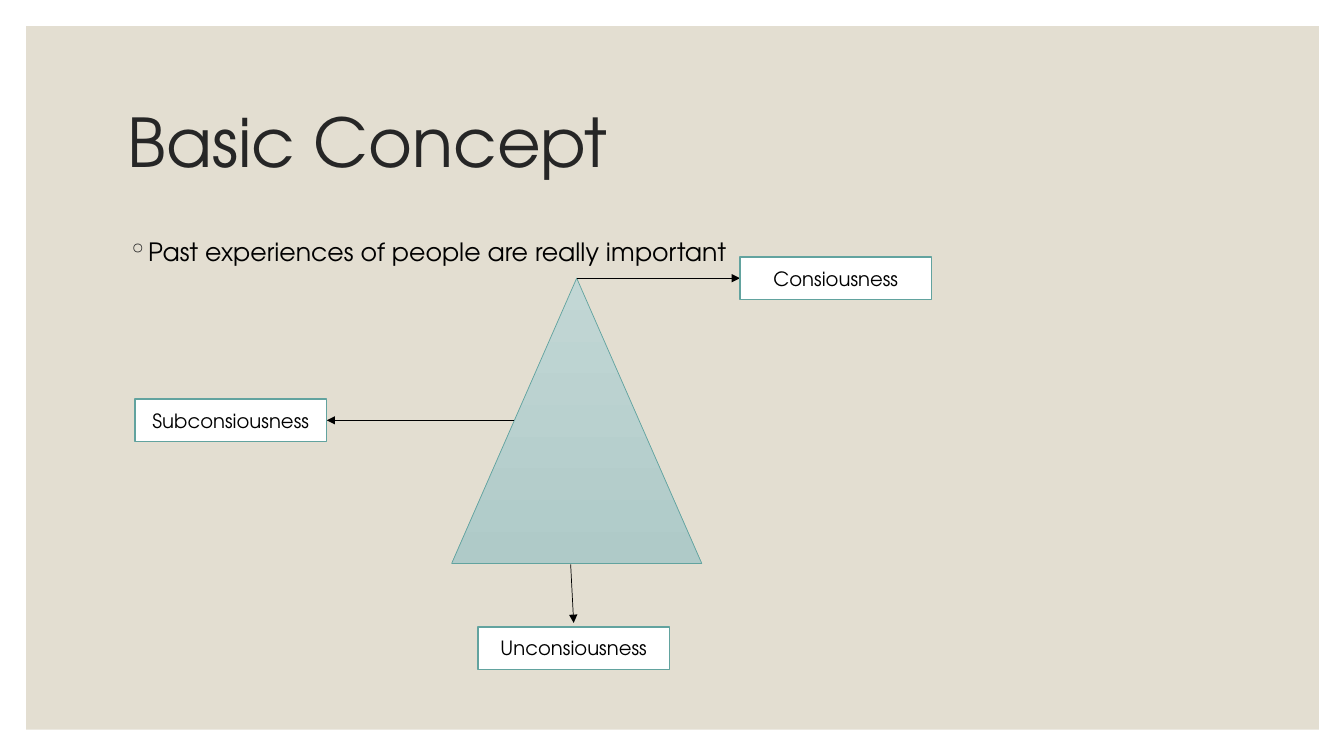
from lxml import etree
from pptx import Presentation
from pptx.dml.color import RGBColor
from pptx.enum.shapes import MSO_CONNECTOR, MSO_SHAPE
from pptx.enum.text import MSO_ANCHOR, PP_ALIGN
from pptx.oxml.ns import qn
from pptx.util import Pt

PX = 9144
FONT = "TeX Gyre Adventor"
WHITE = RGBColor(0xFF, 0xFF, 0xFF)
BLACK = RGBColor(0x00, 0x00, 0x00)
CHARCOAL = RGBColor(0x26, 0x26, 0x26)
SAND = RGBColor(0xE3, 0xDE, 0xD1)
TEAL = RGBColor(0x62, 0xA3, 0x9F)
TEAL_LIGHT = RGBColor(0xC2, 0xD7, 0xD5)
TEAL_MID = RGBColor(0xAF, 0xCA, 0xC8)
RECTANGLE = MSO_SHAPE.RECTANGLE
TRIANGLE = MSO_SHAPE.ISOSCELES_TRIANGLE
STRAIGHT = MSO_CONNECTOR.STRAIGHT
MIDDLE = MSO_ANCHOR.MIDDLE
TOP_SIDE, LEFT_SIDE, RIGHT_SIDE = 0, 1, 3


def px(*lengths):
    """Turn px lengths into EMU."""
    return [length * PX for length in lengths]


def style_text(paragraph, text, size, color):
    """Write one paragraph in the slide font."""
    paragraph.text = text
    paragraph.font.name = FONT
    paragraph.font.size = Pt(size)
    paragraph.font.color.rgb = color


def add_backdrop(slide, box):
    """Fill the box with the sand panel."""
    panel = slide.shapes.add_shape(RECTANGLE, *px(*box))
    panel.shadow.inherit = False
    panel.fill.solid()
    panel.fill.fore_color.rgb = SAND
    panel.line.fill.background()


def add_title(slide, box, text):
    """Place the heading in the vertical middle of the box."""
    frame = slide.shapes.add_textbox(*px(*box)).text_frame
    frame.word_wrap = True
    frame.vertical_anchor = MIDDLE
    style_text(frame.paragraphs[0], text, 48, CHARCOAL)
    frame.paragraphs[0].line_spacing = 0.9


def add_statement(slide, box, text):
    """Place one bulleted statement at the top of the box."""
    frame = slide.shapes.add_textbox(*px(*box)).text_frame
    frame.word_wrap = True
    statement = frame.paragraphs[0]
    style_text(statement, text, 18, BLACK)
    statement.space_before = Pt(9)
    properties = statement._p.get_or_add_pPr()
    properties.set("marL", str(20 * PX))
    properties.set("indent", str(-20 * PX))
    bullet_color = etree.Element(qn("a:buClr"))
    etree.SubElement(bullet_color, qn("a:srgbClr"), val=str(CHARCOAL))
    bullet = etree.Element(qn("a:buChar"), char="◦")
    position = properties.index(properties.find(qn("a:defRPr")))
    properties.insert(position, bullet_color)
    properties.insert(position + 1, bullet)


def add_label(slide, box, text):
    """Place a white level label with centred text."""
    label = slide.shapes.add_shape(RECTANGLE, *px(*box))
    label.shadow.inherit = False
    label.fill.solid()
    label.fill.fore_color.rgb = WHITE
    label.line.color.rgb = TEAL
    label.line.width = Pt(1)
    label.text_frame.vertical_anchor = MIDDLE
    level = label.text_frame.paragraphs[0]
    style_text(level, text, 14, BLACK)
    level.alignment = PP_ALIGN.CENTER
    return label


def add_arrow(slide, start, end):
    """Draw a thin black arrow from start to end."""
    arrow = slide.shapes.add_connector(STRAIGHT, *px(*start, *end))
    arrow.line.color.rgb = BLACK
    arrow.line.width = Pt(0.5)
    etree.SubElement(arrow.line._get_or_add_ln(), qn("a:tailEnd"), type="triangle")
    etree.SubElement(arrow._element.spPr, qn("a:effectLst"))
    return arrow


def add_mind_pyramid(slide, box):
    """Draw the triangle in the box with its three labelled levels."""
    left, top, width, height = box
    apex = left + width // 2
    middle = top + height // 2
    bottom = top + height
    pyramid = slide.shapes.add_shape(TRIANGLE, *px(*box))
    pyramid.shadow.inherit = False
    pyramid.fill.gradient()
    pyramid.fill.gradient_angle = 270
    for stop, color in zip(pyramid.fill.gradient_stops, (TEAL_LIGHT, TEAL_MID)):
        stop.color.rgb = color
    pyramid.line.color.rgb = TEAL
    pyramid.line.width = Pt(0.5)

    label_width, label_height = 190, 42
    conscious_left = left + 286
    subconscious_left = left - 314
    unconscious_left = left + 26
    unconscious_top = bottom + 63

    to_conscious = add_arrow(slide, (apex, top), (conscious_left, top))
    to_subconscious = add_arrow(
        slide, (left + width // 4, middle), (subconscious_left + label_width, middle))
    add_arrow(slide, (apex - 6, bottom + 1),
              (unconscious_left + label_width // 2, unconscious_top - 4))

    conscious, subconscious, _ = [
        add_label(slide, (x, y, label_width, label_height), text)
        for x, y, text in (
            (conscious_left, top - label_height // 2, "Consiousness"),
            (subconscious_left, middle - label_height // 2, "Subconsiousness"),
            (unconscious_left, unconscious_top, "Unconsiousness"),
        )
    ]
    to_conscious.begin_connect(pyramid, TOP_SIDE)
    to_conscious.end_connect(conscious, LEFT_SIDE)
    to_subconscious.end_connect(subconscious, RIGHT_SIDE)


def main():
    """Build the slide and save it."""
    deck = Presentation()
    deck.slide_width, deck.slide_height = px(1333, 750)
    slide = deck.slides.add_slide(deck.slide_layouts[6])
    add_backdrop(slide, (26, 26, 1282, 698))
    add_title(slide, (117, 70, 1100, 150), "Basic Concept")
    add_statement(slide, (117, 230, 1100, 430),
                  "Past experiences of people are really important")
    add_mind_pyramid(slide, (448, 276, 248, 283))
    deck.save("out.pptx")


if __name__ == "__main__":
    main()
